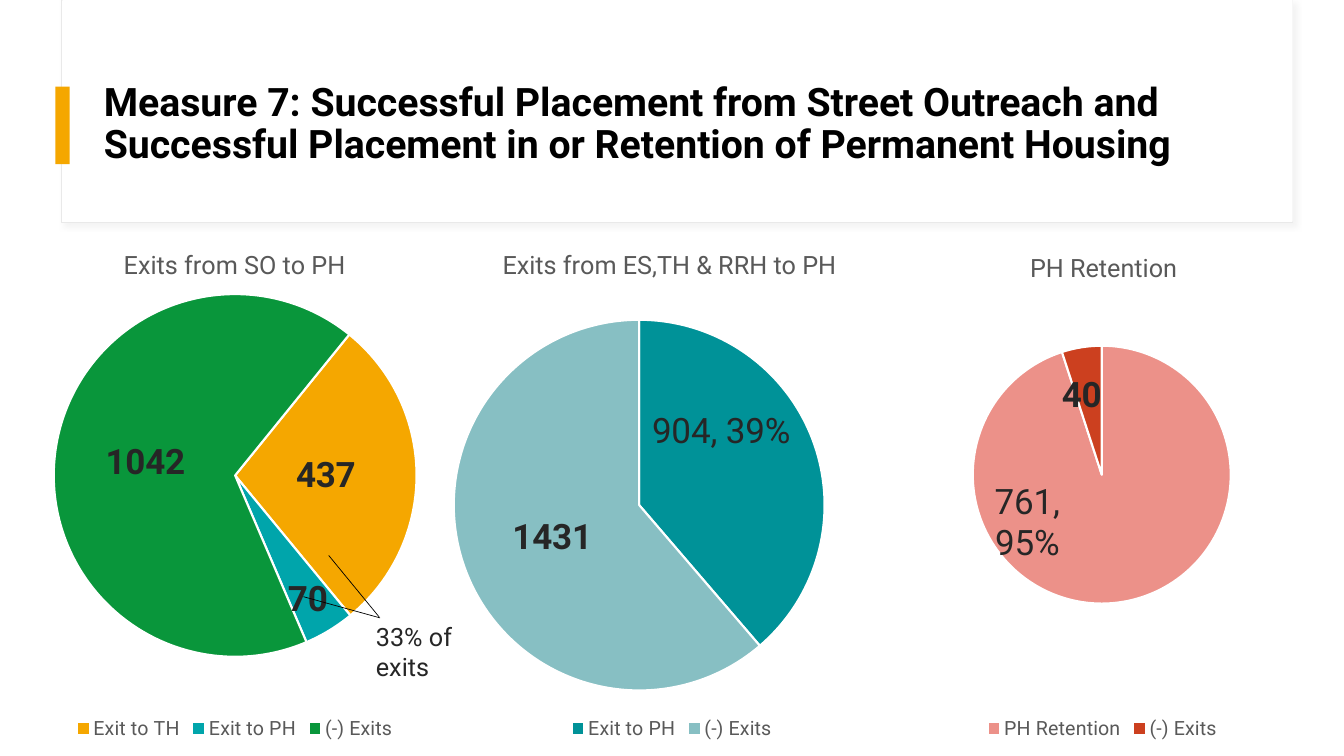
from dataclasses import dataclass, field

from lxml import etree
from pptx import Presentation
from pptx.chart.data import CategoryChartData
from pptx.dml.color import RGBColor
from pptx.enum.chart import XL_CHART_TYPE, XL_LABEL_POSITION, XL_LEGEND_POSITION
from pptx.enum.shapes import MSO_CONNECTOR, MSO_SHAPE
from pptx.enum.text import MSO_ANCHOR
from pptx.oxml import parse_xml
from pptx.oxml.ns import nsdecls, qn
from pptx.util import Inches, Pt

FONT = "Roboto"
INK = "262626"
GREY = "595959"
CHART_TOP, CHART_HEIGHT = 2.22, 5.17


@dataclass
class Label:
    text: str = ""
    dx: float = 0
    dy: float = 0


@dataclass
class Slice:
    name: str
    value: int
    color: str
    label: Label = field(default_factory=Label)


@dataclass
class Pie:
    title: str
    title_at: tuple[float, float]
    left: float
    width: float
    center: tuple[float, float]
    radius: float
    slices: list[Slice]
    start: int = 0


PIES = [
    Pie("Exits from SO to PH", (1.18, 2.42), -0.21, 5.08, (2.33, 4.72), 1.8, [
        Slice("Exit to TH", 437, "F5A700"),
        Slice("Exit to PH", 70, "00A5AB", Label(dx=0.05, dy=0.09)),
        Slice("(-) Exits", 1042, "09963B"),
    ], start=39),
    Pie("Exits from ES,TH & RRH to PH", (4.94, 2.42), 4.2, 4.93, (6.34, 5.01), 1.84, [
        Slice("Exit to PH", 904, "009298", Label("904, 39%", -0.01, -0.08)),
        Slice("(-) Exits", 1431, "87BFC3"),
    ]),
    Pie("PH Retention", (10.17, 2.45), 8.47, 4.93, (10.93, 4.71), 1.28, [
        Slice("PH Retention", 761, "EC9189", Label("761, 95%", -0.17, -0.03)),
        Slice("(-) Exits", 40, "CC401F", Label(dx=-0.02, dy=-0.03)),
    ]),
]
CALLOUT_LINES = [((3.26, 5.51), (3.76, 6.12)), ((3.01, 5.92), (3.77, 6.13))]


def rgb(value: str) -> RGBColor:
    return RGBColor.from_string(value)


def set_font(font, size: float, color: str, bold: bool = False) -> None:
    font.name, font.size, font.bold = FONT, Pt(size), bold
    font.color.rgb = rgb(color)


def add_rect(s, box: tuple, fill: str, line: str = ""):
    sp = s.shapes.add_shape(MSO_SHAPE.RECTANGLE, *map(Inches, box))
    sp.shadow.inherit = False
    sp.fill.solid()
    sp.fill.fore_color.rgb = rgb(fill)
    if line:
        sp.line.color.rgb = rgb(line)
        sp.line.width = Pt(0.75)
    else:
        sp.line.fill.background()
    return sp


def add_header(s) -> None:
    frame = add_rect(s, (0.61, 0, 12.21, 2.21), "FFFFFF", "E9E9E9")
    effects = frame._element.spPr.find(qn("a:effectLst"))
    effects.append(parse_xml(
        f'<a:outerShdw {nsdecls("a")} blurRad="{Pt(4)}" dist="{Pt(3)}" dir="2700000">'
        '<a:srgbClr val="D9D9D9"><a:alpha val="30000"/></a:srgbClr></a:outerShdw>'))
    add_rect(s, (0.62, 0, 12.2, 2.2), "FFFFFF")
    add_rect(s, (0.55, 0.86, 0.14, 0.77), "F5A700")


def fill_title(sp) -> None:
    sp.left, sp.top, sp.width, sp.height = map(Inches, (0.93, 0.6, 11.73, 1.27))
    tf = sp.text_frame
    tf.word_wrap, tf.vertical_anchor = True, MSO_ANCHOR.MIDDLE
    p = tf.paragraphs[0]
    p.line_spacing = 0.9
    p.alignment = 1
    r = p.add_run()
    r.text = ("Measure 7: Successful Placement from Street Outreach and "
              "Successful Placement in or Retention of Permanent Housing")
    set_font(r.font, 28, "000000", True)


def set_layout(parent, **values) -> None:
    """Give a chart part a manual layout, as its schema order requires."""
    for old in parent.findall(qn("c:layout")):
        parent.remove(old)
    layout = parse_xml(f'<c:layout {nsdecls("c")}><c:manualLayout/></c:layout>')
    for tag, value in values.items():
        etree.SubElement(layout[0], qn(f"c:{tag}")).set("val", str(value))
    before = [e for e in parent if e.tag in (qn("c:idx"), qn("c:tx"))]
    parent.insert(parent.index(before[0]) + 1 if before else 0, layout)


def add_pie(s, pie: Pie) -> None:
    data = CategoryChartData()
    data.categories = [part.name for part in pie.slices]
    data.add_series("Series 1", [part.value for part in pie.slices])
    box = (pie.left, CHART_TOP, pie.width, CHART_HEIGHT)
    chart = s.shapes.add_chart(XL_CHART_TYPE.PIE, *map(Inches, box), data).chart
    set_font(chart.font, 10, "000000")

    r = chart.chart_title.text_frame.paragraphs[0].add_run()
    r.text = pie.title
    set_font(r.font, 18, GREY)
    chart.chart_title.include_in_layout = False
    title_x, title_y = pie.title_at
    set_layout(chart.chart_title._element, xMode="edge", yMode="edge",
               x=round((title_x - pie.left) / pie.width, 3),
               y=round((title_y - CHART_TOP) / CHART_HEIGHT, 3))

    chart.has_legend = True
    chart.legend.position = XL_LEGEND_POSITION.BOTTOM
    chart.legend.include_in_layout = False
    set_font(chart.legend.font, 14, GREY)

    plot = chart.plots[0]
    plot.vary_by_categories = True
    angle = plot._element.find(qn("c:firstSliceAng"))
    if angle is None:
        angle = etree.SubElement(plot._element, qn("c:firstSliceAng"))
    angle.set("val", str(pie.start))
    x, y = pie.center
    set_layout(chart._chartSpace.chart.plotArea, layoutTarget="inner",
               xMode="edge", yMode="edge",
               x=round((x - pie.radius - pie.left) / pie.width, 3),
               y=round((y - pie.radius - CHART_TOP) / CHART_HEIGHT, 3),
               w=round(2 * pie.radius / pie.width, 3),
               h=round(2 * pie.radius / CHART_HEIGHT, 3))

    series = plot.series[0]
    labels = series.data_labels
    labels.show_value, labels.position = True, XL_LABEL_POSITION.CENTER
    set_font(labels.font, 25, INK, True)
    for i, part in enumerate(pie.slices):
        point = series.points[i]
        point.format.fill.solid()
        point.format.fill.fore_color.rgb = rgb(part.color)
        point.format.line.color.rgb = rgb("FFFFFF")
        point.format.line.width = Pt(1.5)
        if part.label.dx:
            add_point_label(series, i, part.label)


def add_point_label(series, i: int, label: Label) -> None:
    data_label = series.points[i].data_label
    if label.text:
        r = data_label.text_frame.paragraphs[0].add_run()
        r.text = label.text
        set_font(r.font, 25, INK)
    else:
        set_font(data_label.font, 25, INK, True)
    data_label.position = XL_LABEL_POSITION.CENTER
    element = series._element.xpath(f"c:dLbls/c:dLbl[c:idx/@val='{i}']")[0]
    set_layout(element, x=label.dx, y=label.dy)


def add_callout(s) -> None:
    for start, end in CALLOUT_LINES:
        line = s.shapes.add_connector(MSO_CONNECTOR.STRAIGHT, *map(Inches, start + end))
        line.line.color.rgb = rgb("000000")
        line.line.width = Pt(0.5)
        etree.SubElement(line._element.spPr, qn("a:effectLst"))
    tf = s.shapes.add_textbox(*map(Inches, (3.63, 6.11, 1.21, 0.71))).text_frame
    tf.word_wrap = True
    r = tf.paragraphs[0].add_run()
    r.text = "33% of exits"
    set_font(r.font, 18, INK)


def main() -> None:
    prs = Presentation()
    prs.slide_width, prs.slide_height = Inches(13.33), Inches(7.5)
    s = prs.slides.add_slide(prs.slide_layouts[5])
    add_header(s)
    title = s.shapes.title
    fill_title(title)
    s.shapes._spTree.append(title._element)
    add_pie(s, PIES[0])
    add_callout(s)
    for pie in PIES[1:]:
        add_pie(s, pie)
    prs.save("out.pptx")


if __name__ == "__main__":
    main()
